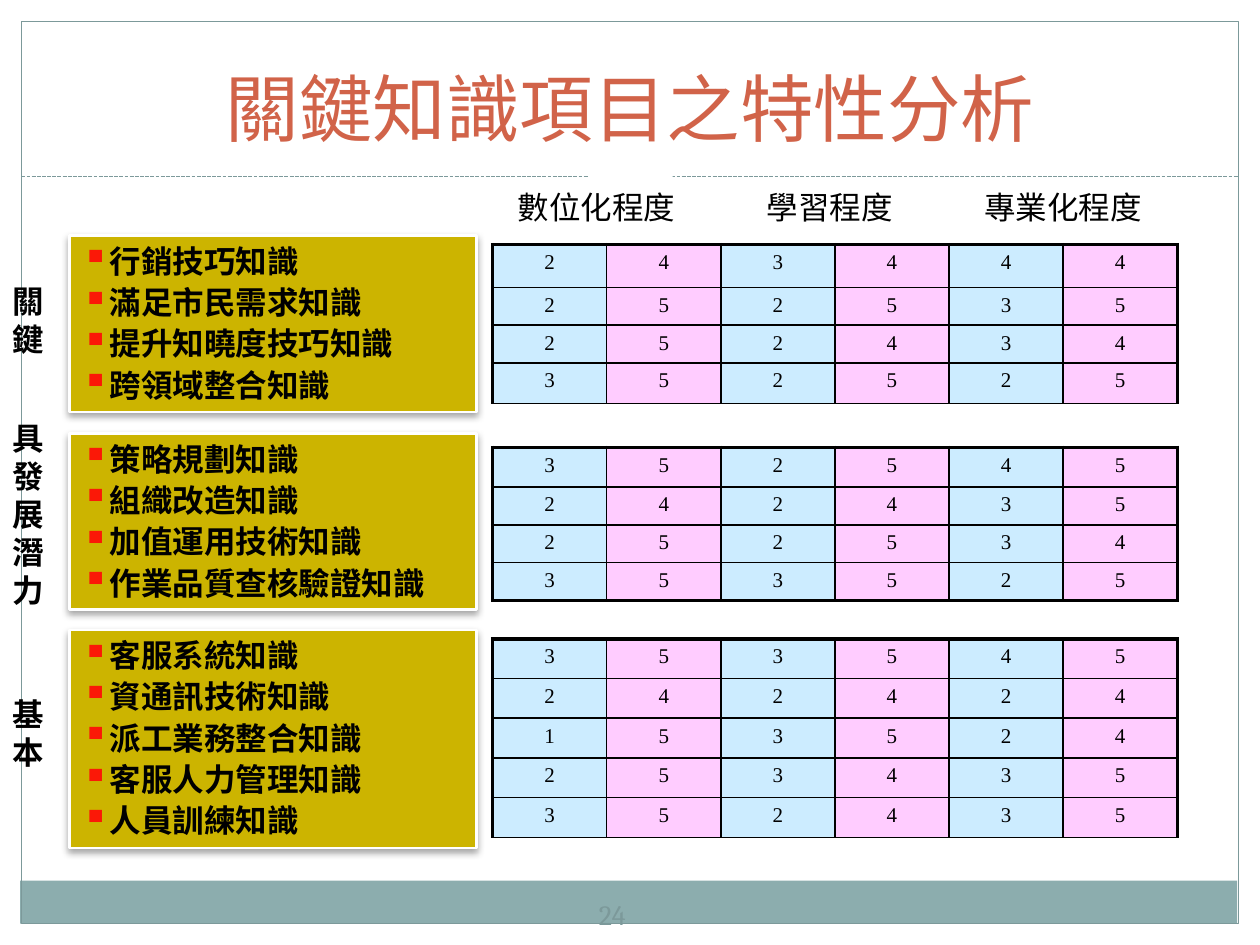
from lxml import etree
from pptx import Presentation
from pptx.dml.color import RGBColor
from pptx.enum.dml import MSO_LINE
from pptx.enum.shapes import MSO_CONNECTOR, MSO_SHAPE
from pptx.enum.text import MSO_ANCHOR, MSO_AUTO_SIZE, PP_ALIGN
from pptx.oxml import parse_xml
from pptx.oxml.ns import nsdecls, qn
from pptx.util import Inches, Pt

RECT, OVAL = MSO_SHAPE.RECTANGLE, MSO_SHAPE.OVAL
STRAIGHT = MSO_CONNECTOR.STRAIGHT
DASH = MSO_LINE.SQUARE_DOT
LEFT, CENTER = PP_ALIGN.LEFT, PP_ALIGN.CENTER
TOP, MIDDLE, BOTTOM = MSO_ANCHOR.TOP, MSO_ANCHOR.MIDDLE, MSO_ANCHOR.BOTTOM
GROW, FIXED = MSO_AUTO_SIZE.SHAPE_TO_FIT_TEXT, MSO_AUTO_SIZE.NONE

BLACK = RGBColor(0x00, 0x00, 0x00)
WHITE = RGBColor(0xFF, 0xFF, 0xFF)
SLATE = RGBColor(0x7C, 0x99, 0x9A)
TEAL = RGBColor(0x8C, 0xAD, 0xAE)
RUST = RGBColor(0xD1, 0x63, 0x49)
MUSTARD = RGBColor(0xCC, 0xB4, 0x00)
RED = RGBColor(0xFB, 0x18, 0x07)
SKY = RGBColor(0xCC, 0xEC, 0xFF)
PINK = RGBColor(0xFF, 0xCC, 0xFF)

THICK, THIN = 2.25, 1
COLUMNS, ROWS = 100, 75

HEADINGS = [("數位化程度", 39.5, 15.7), ("學習程度", 58.4, 14.9), ("專業化程度", 76.5, 15.7)]

GROUPS = [
    {"label": "關鍵", "label_top": 21.9, "card_top": 18.7, "table_top": 19.4,
     "row_heights": [3.4, 3, 3, 3.2], "bottom": THIN,
     "scores": {"行銷技巧知識": "243444", "滿足市民需求知識": "252535",
                "提升知曉度技巧知識": "252434", "跨領域整合知識": "352525"}},
    {"label": "具發展潛力", "label_top": 32.8, "card_top": 34.4, "table_top": 35.5,
     "row_heights": [3.15, 3, 3, 3], "bottom": THICK,
     "scores": {"策略規劃知識": "352545", "組織改造知識": "242435",
                "加值運用技術知識": "252534", "作業品質查核驗證知識": "353525"}},
    {"label": "基本", "label_top": 54.7, "card_top": 50, "table_top": 50.7,
     "row_heights": [3.15] * 5, "bottom": THIN,
     "scores": {"客服系統知識": "353545", "資通訊技術知識": "242424",
                "派工業務整合知識": "153524", "客服人力管理知識": "253435",
                "人員訓練知識": "352435"}},
]


class SlideBuilder:
    """Places elements on a grid of COLUMNS by ROWS and holds the text styles."""

    cjk = "Noto Sans CJK SC"
    styles = {
        "title": {"name": cjk, "size": Pt(42), "color": RUST},
        "heading": {"name": cjk, "size": Pt(18), "color": BLACK},
        "strong": {"name": cjk, "size": Pt(18), "bold": True, "color": BLACK},
        "score": {"name": "Times New Roman", "size": Pt(12), "color": BLACK},
        "number": {"name": "Cambria", "size": Pt(16), "color": SLATE},
    }

    def __init__(self, deck):
        self.slide = deck.slides.add_slide(deck.slide_layouts[5])
        self.shapes = self.slide.shapes
        self.column = deck.slide_width / COLUMNS
        self.row = deck.slide_height / ROWS

    def place(self, left, top, width, height):
        return (round(left * self.column), round(top * self.row),
                round(width * self.column), round(height * self.row))

    def fill_text(self, frame, lines, style, align=LEFT, after=0, bulleted=False):
        for index, line in enumerate(lines):
            paragraph = frame.add_paragraph() if index else frame.paragraphs[0]
            if bulleted:
                self.bullet(paragraph)
            paragraph.alignment = align
            run = paragraph.add_run()
            run.text = line
            for key, value in self.styles[style].items():
                if key == "color":
                    run.font.color.rgb = value
                else:
                    setattr(run.font, key, value)
            if run.font.name == self.cjk:
                latin = run._r.rPr.find(qn("a:latin"))
                east_asian = etree.Element(qn("a:ea"), typeface=self.cjk)
                latin.addnext(east_asian)
                paragraph.line_spacing = Pt(run.font.size.pt * 1.2)
            if after:
                paragraph.space_after = Pt(after)

    def bullet(self, paragraph):
        properties = paragraph._p.get_or_add_pPr()
        properties.set("marL", "0")
        properties.set("indent", "0")
        color = etree.SubElement(properties, qn("a:buClr"))
        etree.SubElement(color, qn("a:srgbClr"), val=str(RED))
        etree.SubElement(properties, qn("a:buSzPct"), val="120000")
        etree.SubElement(properties, qn("a:buChar"), char="▪")

    def title(self, text, *box):
        holder = self.shapes.title
        holder.left, holder.top, holder.width, holder.height = self.place(*box)
        holder.text_frame.vertical_anchor = BOTTOM
        self.fill_text(holder.text_frame, [text], "title", CENTER)
        holder.element.getparent().append(holder.element)

    def text(self, lines, style, *box, inset=None, align=LEFT, **settings):
        frame = self.shapes.add_textbox(*self.place(*box)).text_frame
        if inset is not None:
            for side in ("left", "top", "right", "bottom"):
                settings[f"margin_{side}"] = Inches(inset)
        for key, value in settings.items():
            setattr(frame, key, value)
        self.fill_text(frame, lines, style, align)

    def shape(self, kind, *box, fill=None, line=None, weight=0.75):
        shape = self.shapes.add_shape(kind, *self.place(*box))
        shape.shadow.inherit = False
        for part, color in ((shape.fill, fill), (shape.line.fill, line)):
            if color is None:
                part.background()
            else:
                part.solid()
                part.fore_color.rgb = color
        if line is not None:
            shape.line.width = Pt(weight)
        return shape

    def divider(self, left, top, right):
        x, y, end, _ = self.place(left, top, right, 0)
        rule = self.shapes.add_connector(STRAIGHT, x, y, end, y)
        rule.line.color.rgb = SLATE
        rule.line.width = Pt(0.75)
        rule.line.dash_style = DASH
        etree.SubElement(rule.element.spPr, qn("a:effectLst"))

    def card(self, items, top):
        card = self.shape(RECT, 5.5, top, 32.3, 3.3 * len(items) + 0.8,
                          fill=MUSTARD, line=WHITE, weight=1.57)
        card.element.spPr.find(qn("a:effectLst")).append(parse_xml(
            f'<a:outerShdw {nsdecls("a")} blurRad="{Pt(4)}" dist="{Pt(2)}" '
            'dir="5400000" rotWithShape="0"><a:srgbClr val="000000">'
            '<a:alpha val="35000"/></a:srgbClr></a:outerShdw>'))
        frame = card.text_frame
        frame.word_wrap = True
        frame.auto_size = GROW
        frame.vertical_anchor = TOP
        self.fill_text(frame, items, "strong", after=2, bulleted=True)

    def score_table(self, scores, top, row_heights, bottom):
        last_row, last_column = len(scores) - 1, len(scores[0]) - 1
        box = self.place(39.1, top, 54.35, sum(row_heights))
        table = self.shapes.add_table(last_row + 1, last_column + 1, *box).table
        table.first_row = table.horz_banding = False
        for row, height in zip(table.rows, row_heights):
            row.height = round(height * self.row)
        for r, values in enumerate(scores):
            for c, value in enumerate(values):
                cell = table.cell(r, c)
                self.borders(cell, {
                    "L": THIN if c else THICK,
                    "R": THICK if c == last_column else THIN,
                    "T": THIN if r else THICK,
                    "B": bottom if r == last_row else THIN,
                })
                cell.fill.solid()
                cell.fill.fore_color.rgb = PINK if c % 2 else SKY
                self.fill_text(cell.text_frame, [value], "score", CENTER)

    def borders(self, cell, weights):
        properties = cell._tc.get_or_add_tcPr()
        for side, weight in weights.items():
            edge = etree.SubElement(properties, qn(f"a:ln{side}"), w=str(Pt(weight)))
            fill = etree.SubElement(edge, qn("a:solidFill"))
            etree.SubElement(fill, qn("a:srgbClr"), val=str(BLACK))


def main():
    deck = Presentation()
    deck.slide_width, deck.slide_height = Inches(10), Inches(7.5)
    page = SlideBuilder(deck)

    page.shape(RECT, 1.6, 69.9, 96.6, 3.4, fill=TEAL)
    page.shape(RECT, 1.7, 1.7, 96.6, 71.6, line=SLATE)
    page.divider(1.7, 14, 98.3)
    page.shape(OVAL, 46.7, 10.5, 6.7, 6.7, fill=WHITE)
    page.title("關鍵知識項目之特性分析", 5, 3.1, 90, 9.4)

    for heading, left, width in HEADINGS:
        page.text([heading], "heading", left, 14.1, width, 4.6, inset=0.08,
                  align=CENTER, word_wrap=True, auto_size=GROW)

    for group in GROUPS:
        label, scores = group["label"], group["scores"]
        page.text(list(label), "strong", 0, group["label_top"], 4.5, 3 * len(label) + 1,
                  word_wrap=False, auto_size=GROW)
        page.score_table(list(scores.values()), group["table_top"],
                         group["row_heights"], group["bottom"])
        page.card(list(scores), group["card_top"])

    page.text(["24"], "number", 46.1, 70.2, 5, 4.8, inset=0.05, align=CENTER,
              word_wrap=True, auto_size=FIXED, vertical_anchor=MIDDLE)
    deck.save("out.pptx")


if __name__ == "__main__":
    main()
